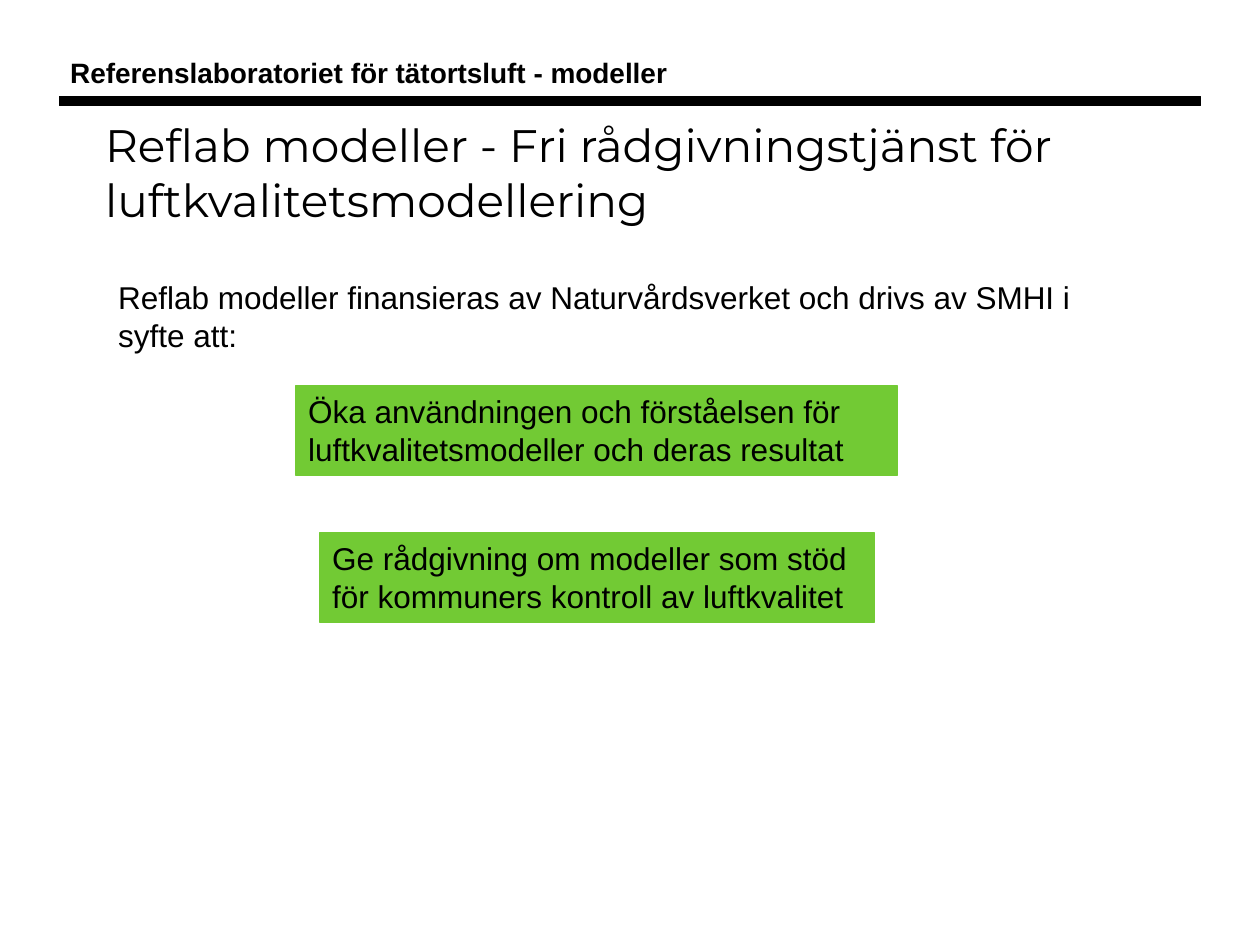
"""Build the Reflab modeller slide about its free advisory service."""
from pptx import Presentation
from pptx.dml.color import RGBColor
from pptx.enum.shapes import MSO_SHAPE
from pptx.enum.text import MSO_ANCHOR, PP_ALIGN
from pptx.util import Pt

COLORS = {"text": "000000", "rule": "000000", "goal": "72CA34"}


def add_bar(page, left, top, width, height, color):
    bar = page.shapes.add_shape(
        MSO_SHAPE.RECTANGLE, Pt(left), Pt(top), Pt(width), Pt(height))
    bar.shadow.inherit = False
    bar.fill.solid()
    bar.fill.fore_color.rgb = RGBColor.from_string(COLORS[color])
    bar.line.color.rgb = RGBColor.from_string(COLORS[color])
    bar.line.width = Pt(0.75)
    return bar


def write_text(box, text, size, name="Arial", bold=False, anchor=MSO_ANCHOR.TOP):
    frame = box.text_frame
    frame.word_wrap = True
    frame.vertical_anchor = anchor
    para = frame.paragraphs[0]
    para.text = text
    para.alignment = PP_ALIGN.LEFT
    para.font.size = Pt(size)
    para.font.name = name
    para.font.bold = bold
    para.font.color.rgb = RGBColor.from_string(COLORS["text"])


deck = Presentation()
deck.slide_width, deck.slide_height = Pt(720), Pt(540)
page = deck.slides.add_slide(deck.slide_layouts[5])

add_bar(page, 34, 55, 652, 5.5, "rule")

title = page.shapes.title
title.left, title.top, title.width, title.height = Pt(60), Pt(65.5), Pt(601), Pt(64)
frame = title.text_frame
frame.margin_left = frame.margin_top = frame.margin_right = frame.margin_bottom = 0
write_text(title, "Reflab modeller - Fri rådgivningstjänst för luftkvalitetsmodellering",
           26, "Montserrat", anchor=MSO_ANCHOR.BOTTOM)

goals = [
    (169, 220.5, 344, "Öka användningen och förståelsen för luftkvalitetsmodeller och deras resultat"),
    (182.75, 304.5, 317, "Ge rådgivning om modeller som stöd för kommuners kontroll av luftkvalitet"),
]
for left, top, width, text in goals:
    write_text(add_bar(page, left, top, width, 51, "goal"), text, 18)

header = page.shapes.add_textbox(Pt(33), Pt(28), Pt(430), Pt(27))
write_text(header, "Referenslaboratoriet för tätortsluft - modeller", 16, bold=True)

intro = page.shapes.add_textbox(Pt(60.5), Pt(155.5), Pt(562), Pt(51))
write_text(intro, "Reflab modeller finansieras av Naturvårdsverket och drivs av SMHI i syfte att:", 18)

deck.save("out.pptx")
